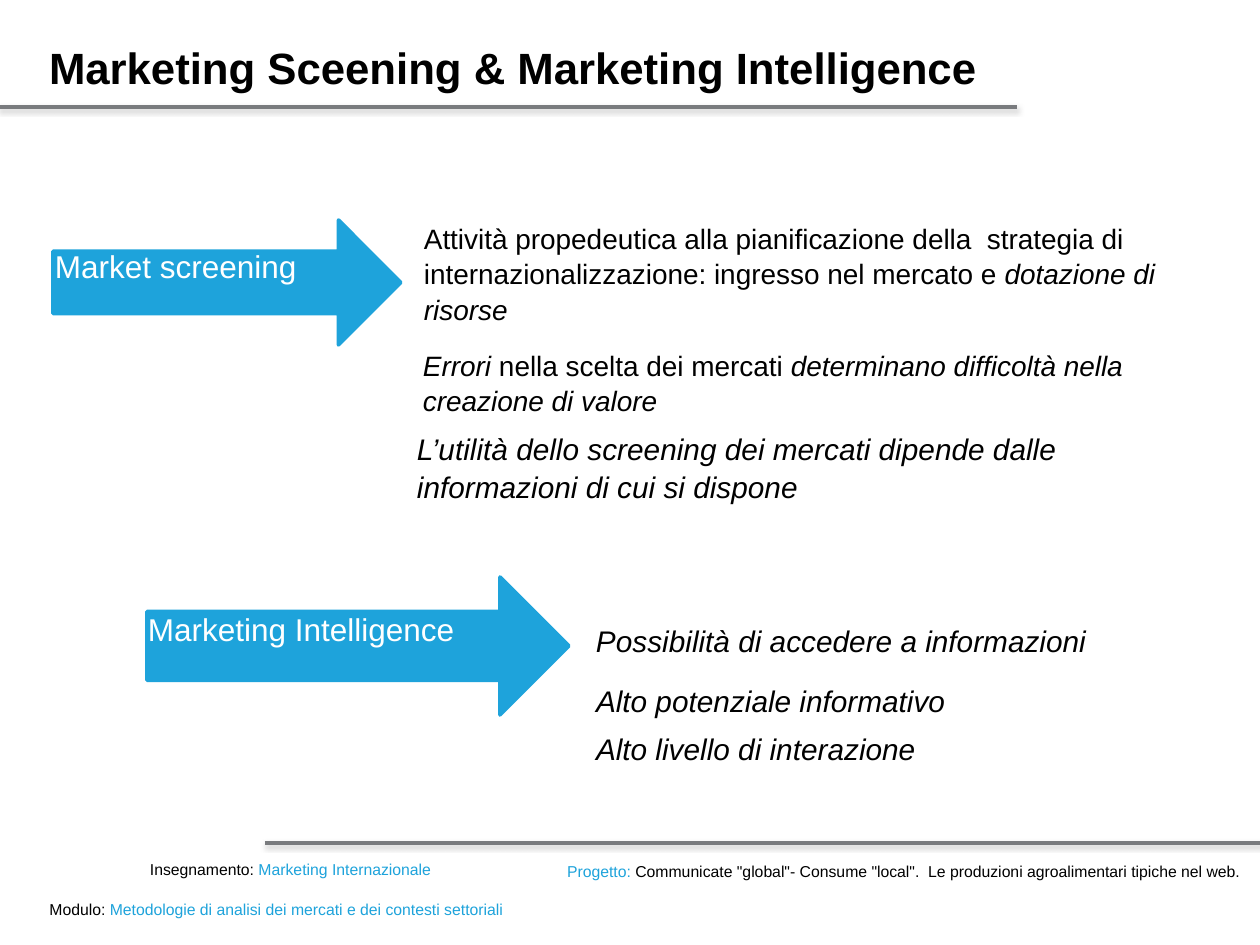
from dataclasses import dataclass

from lxml.etree import SubElement
from pptx import Presentation
from pptx.dml.color import RGBColor
from pptx.enum.shapes import MSO_CONNECTOR as Connector, MSO_SHAPE as Shape
from pptx.enum.text import MSO_ANCHOR as Anchor, PP_ALIGN as Align
from pptx.oxml.ns import qn
from pptx.util import Emu, Pt

BLACK = RGBColor(0, 0, 0)
WHITE = RGBColor(0xFF, 0xFF, 0xFF)
BLUE = RGBColor(0x1E, 0xA3, 0xDB)
GRAY = RGBColor(0x79, 0x7B, 0x7E)
FONT = "Arial"
SCALE = 914400 / 126


def px(n: int) -> Emu:
    return Emu(round(n * SCALE))


@dataclass(frozen=True)
class Box:
    x: int
    y: int
    w: int
    h: int

    def emu(self) -> list[Emu]:
        return [px(n) for n in (self.x, self.y, self.w, self.h)]


@dataclass(frozen=True)
class Run:
    text: str
    color: RGBColor = BLACK
    italic: bool = False
    bold: bool = False


@dataclass(frozen=True)
class Text:
    box: Box
    size: int
    paragraphs: list[list[Run]]
    inset: int = 0
    align: Align = Align.LEFT
    anchor: Anchor = Anchor.TOP
    wrap: bool = True
    spacing: float = 1.0
    after: int = 0


@dataclass(frozen=True)
class ArrowLabel:
    arrow: Box
    label: Box
    text: str


@dataclass(frozen=True)
class Rule:
    x1: int
    x2: int
    y: int


def it(text: str) -> Run:
    return Run(text, italic=True)


def note(box: Box, size: int, *paragraphs: list[Run], **options) -> Text:
    return Text(box, size, list(paragraphs), spacing=1.05, **options)


def footer(box: Box, *runs: Run) -> Text:
    return Text(box, 9, [list(runs)], align=Align.RIGHT, wrap=False)


TITLE = Text(Box(49, 38, 1162, 59), 25,
             [[Run("Marketing Sceening & Marketing Intelligence", bold=True)]],
             align=Align.JUSTIFY, anchor=Anchor.MIDDLE)

BENEFITS = note(Box(590, 675, 629, 96), 17,
                [it("Alto potenziale informativo")],
                [it("Alto livello di interazione")], inset=6, after=6)

NOTES = [
    note(Box(418, 214, 794, 118), 16,
         [Run("Attività propedeutica alla pianificazione della  strategia di "
              "internazionalizzazione: ingresso nel mercato e "),
          it("dotazione di risorse")], inset=6),
    note(Box(417, 341, 794, 81), 16,
         [it("Errori "), Run("nella scelta dei mercati "),
          it("determinano difficoltà nella creazione di valore")], inset=6),
    note(Box(417, 426, 794, 81), 17,
         [it("L’utilità dello screening dei mercati dipende dalle "
             "informazioni di cui si dispone")], anchor=Anchor.MIDDLE),
    note(Box(590, 615, 590, 53), 17,
         [it("Possibilità di accedere a informazioni")], inset=6),
]

FOOTERS = [
    footer(Box(34, 900, 469, 21), Run("Modulo: "),
           Run("Metodologie di analisi dei mercati e dei contesti settoriali", BLUE)),
    footer(Box(544, 862, 696, 21), Run("Progetto: ", BLUE),
           Run('Communicate "global"- Consume "local".  '
               "Le produzioni agroalimentari tipiche nel web.")),
    footer(Box(147, 860, 284, 19), Run("Insegnamento: "),
           Run("Marketing Internazionale", BLUE)),
]

ARROWS = [
    ArrowLabel(Box(53, 220, 348, 125), Box(55, 247, 316, 36), "Market screening"),
    ArrowLabel(Box(147, 577, 422, 138), Box(148, 610, 386, 36), "Marketing Intelligence"),
]

RULES = [Rule(0, 1017, 107), Rule(265, 1281, 843)]


def fill_text(s, text: Text) -> None:
    s.left, s.top, s.width, s.height = text.box.emu()
    tf = s.text_frame
    tf.word_wrap = text.wrap
    tf.vertical_anchor = text.anchor
    tf.margin_left = tf.margin_right = tf.margin_top = tf.margin_bottom = px(text.inset)
    for i, runs in enumerate(text.paragraphs):
        p = tf.add_paragraph() if i else tf.paragraphs[0]
        p.alignment = text.align
        p.line_spacing = text.spacing
        p.space_before = Pt(0)
        p.space_after = Pt(text.after)
        for run in runs:
            r = p.add_run()
            r.text = run.text
            r.font.name = FONT
            r.font.size = Pt(text.size)
            r.font.bold = run.bold
            r.font.italic = run.italic
            r.font.color.rgb = run.color


def remove_bullets(s) -> None:
    for p in s.text_frame.paragraphs:
        pPr = p._p.get_or_add_pPr()
        pPr.set("marL", "0")
        pPr.set("indent", "0")
        SubElement(pPr, qn("a:buNone"))


def add_text(slide, text: Text) -> None:
    fill_text(slide.shapes.add_textbox(*text.box.emu()), text)


def add_rule(slide, rule: Rule) -> None:
    s = slide.shapes.add_connector(Connector.STRAIGHT, px(rule.x1), px(rule.y),
                                   px(rule.x2), px(rule.y))
    s.line.color.rgb = GRAY
    s.line.width = Pt(2)
    effects = SubElement(s._element.spPr, qn("a:effectLst"))
    shadow = SubElement(effects, qn("a:outerShdw"), blurRad=str(Pt(3)),
                        dist=str(Pt(1.6)), dir="5400000", rotWithShape="0")
    color = SubElement(shadow, qn("a:srgbClr"), val="808080")
    SubElement(color, qn("a:alpha"), val="38000")


def add_arrow(slide, item: ArrowLabel) -> None:
    s = slide.shapes.add_shape(Shape.RIGHT_ARROW, *item.arrow.emu())
    s.shadow.inherit = False
    s.fill.solid()
    s.fill.fore_color.rgb = BLUE
    s.line.color.rgb = BLUE
    s.line.width = Pt(2)
    add_text(slide, Text(item.label, 18, [[Run(item.text, WHITE)]]))


def main() -> None:
    prs = Presentation()
    prs.slide_width, prs.slide_height = px(1260), px(945)
    slide = prs.slides.add_slide(prs.slide_layouts[1])
    fill_text(slide.shapes.title, TITLE)
    body = slide.placeholders[1]
    fill_text(body, BENEFITS)
    remove_bullets(body)
    for rule in RULES:
        add_rule(slide, rule)
    for item in ARROWS:
        add_arrow(slide, item)
    for text in NOTES + FOOTERS:
        add_text(slide, text)
    prs.save("out.pptx")


if __name__ == "__main__":
    main()
